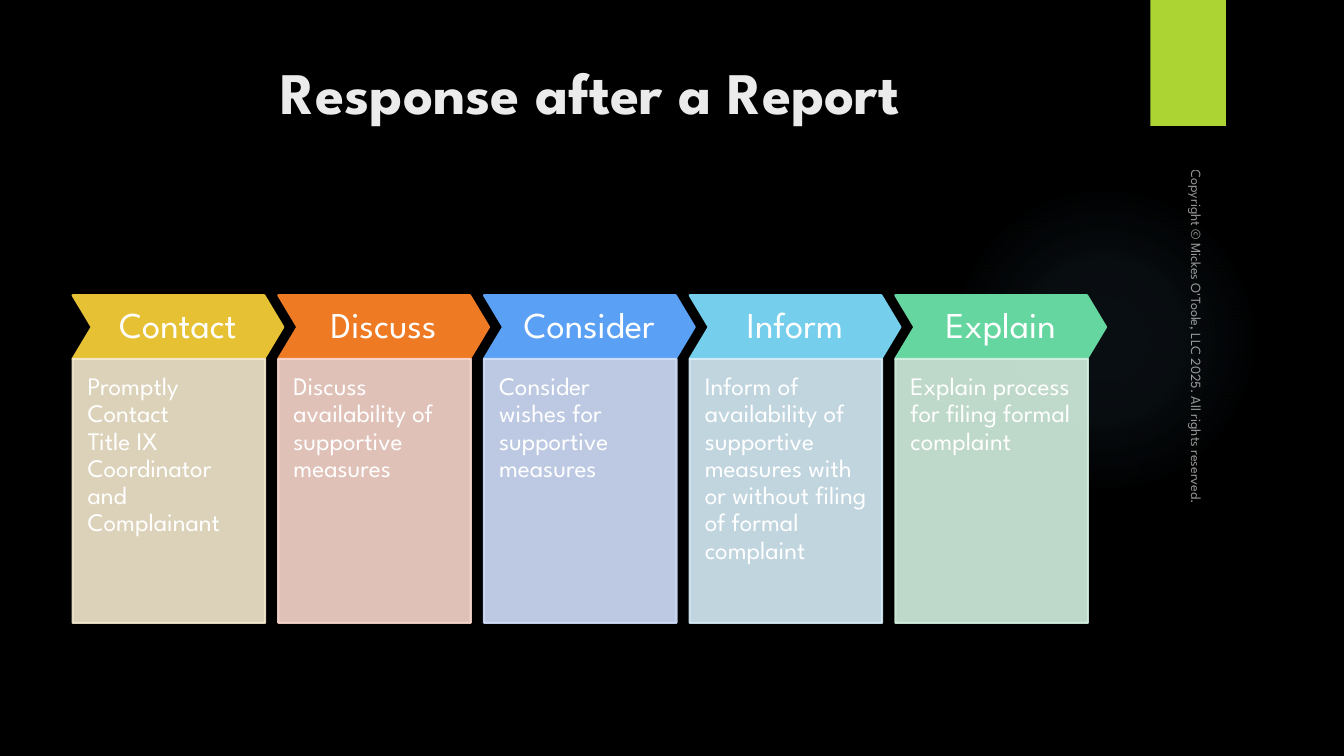
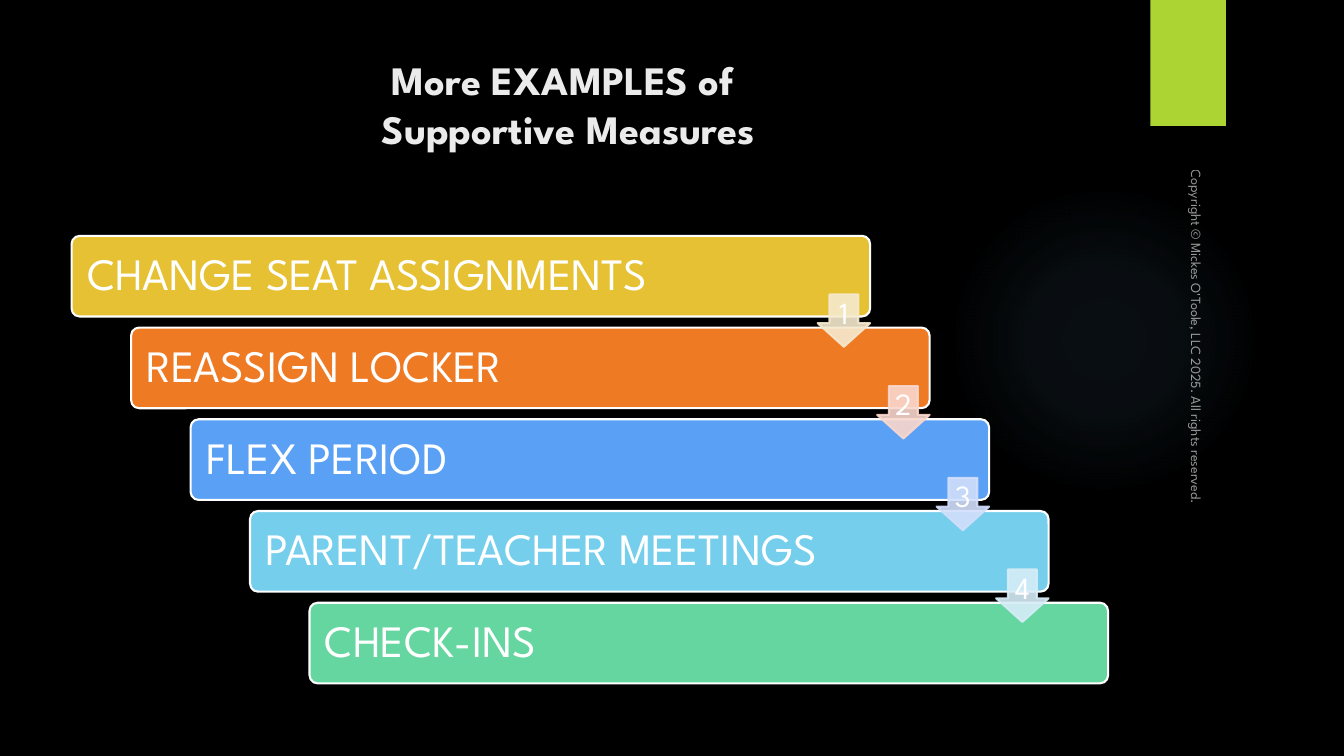
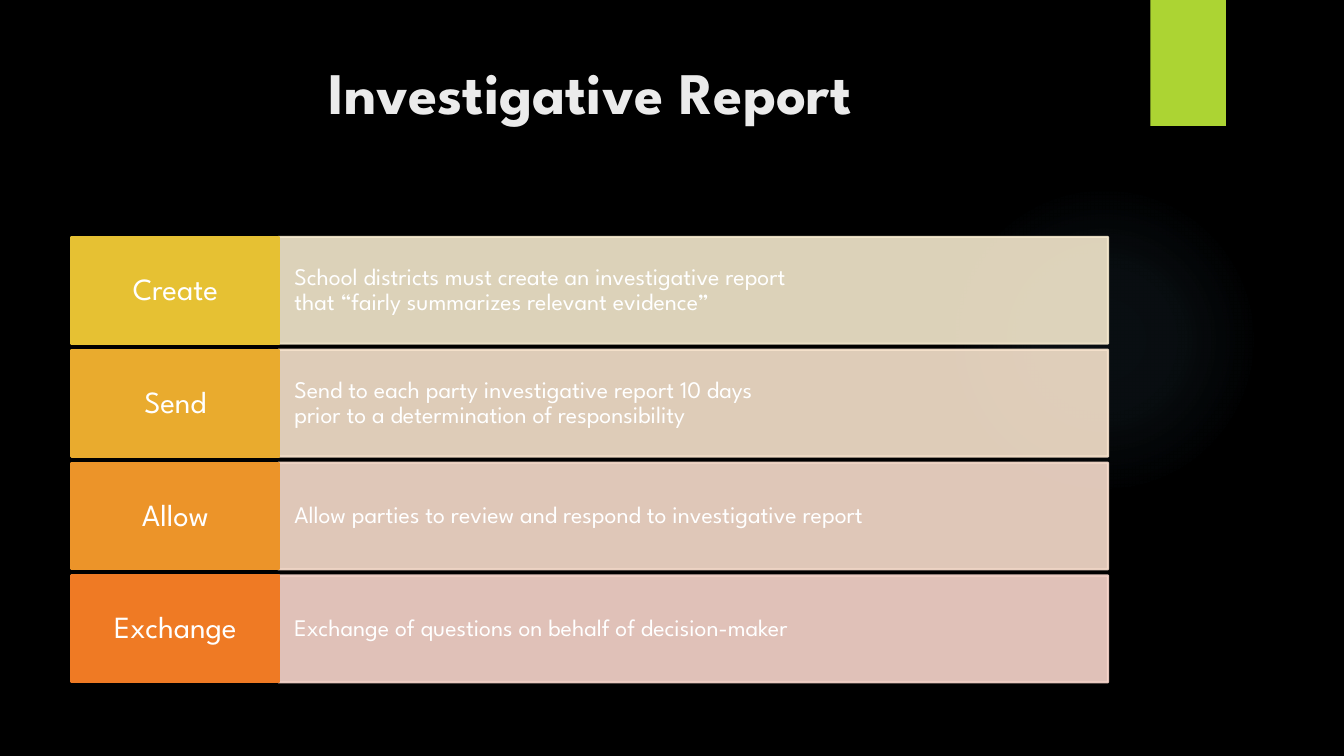
from lxml import etree
from pptx import Presentation
from pptx.dml.color import RGBColor
from pptx.enum.shapes import MSO_SHAPE
from pptx.enum.text import MSO_ANCHOR, MSO_AUTO_SIZE, PP_ALIGN
from pptx.oxml import parse_xml
from pptx.oxml.ns import nsdecls, qn
from pptx.util import Inches, Pt

RECT, ROUNDED, OVAL = MSO_SHAPE.RECTANGLE, MSO_SHAPE.ROUNDED_RECTANGLE, MSO_SHAPE.OVAL
CHEVRON, DOWN_ARROW = MSO_SHAPE.CHEVRON, MSO_SHAPE.DOWN_ARROW
TOP, MIDDLE, BOTTOM = MSO_ANCHOR.TOP, MSO_ANCHOR.MIDDLE, MSO_ANCHOR.BOTTOM
LEFT, CENTER = PP_ALIGN.LEFT, PP_ALIGN.CENTER
NO_AUTOFIT = MSO_AUTO_SIZE.NONE

FONT = "League Spartan"
COLORS = {
    "background": "000000", "title": "EBEBEB", "text": "FFFFFF",
    "band": "ACD433", "glow": "7AC4F0",
    "gold": "E6C133", "amber": "E9AB2E", "tangerine": "EC9429",
    "orange": "EF7A24", "blue": "5AA0F5", "sky": "75CEEC", "green": "65D6A0",
    "pale gold": "F5E9CE", "pale amber": "F7E3CD", "pale tangerine": "F8DDCD",
    "pale orange": "F9D7CD", "pale blue": "D2DFFB", "pale sky": "D6EDF8",
    "pale green": "D3F0DF",
}
GLOW_STOPS = [(0, 7), (36, 6), (69, 0)]  # position and opacity, percent
COPYRIGHT = "Copyright © Mickes O'Toole, LLC 2025. All rights reserved."


def rgb(name):
    return RGBColor.from_string(COLORS[name])


def set_opacity(element, percent):
    for color in element.iter(qn("a:srgbClr")):
        etree.SubElement(color, qn("a:alpha")).set("val", str(percent * 1000))


class Deck:
    def __init__(self):
        self.prs = Presentation()
        self.prs.slide_width, self.prs.slide_height = Inches(13.33), Inches(7.5)
        backdrop = self.prs.slide_master.background.fill
        backdrop.solid()
        backdrop.fore_color.rgb = rgb("background")
        self.slide = None

    def new_slide(self, title, size=42, left=0.71, copyright_line=True):
        self.slide = self.prs.slides.add_slide(self.prs.slide_layouts[5])
        self.glow()
        self.shape(RECT, 11.41, 0, 0.75, 1.25, "band")
        self.title(title, size, left)
        if copyright_line:
            self.copyright()

    def title(self, text, size, left):
        heading = self.slide.shapes.title
        heading.left, heading.top = Inches(left), Inches(0.5)
        heading.width, heading.height = Inches(11 - left), Inches(1.53)
        self.add_text(heading, text, size, CENTER, TOP, color="title", bold=True, spacing=1)

    def glow(self):
        glow = self.shape(OVAL, 9.41, 1.83, 3.08, 3.08)
        stops = "".join(
            f'<a:gs pos="{pos * 1000}"><a:srgbClr val="{COLORS["glow"]}">'
            f'<a:alpha val="{alpha * 1000}"/></a:srgbClr></a:gs>'
            for pos, alpha in GLOW_STOPS)
        gradient = parse_xml(
            f'<a:gradFill {nsdecls("a")}><a:gsLst>{stops}</a:gsLst><a:path path="circle">'
            '<a:fillToRect l="50000" t="50000" r="50000" b="50000"/></a:path></a:gradFill>')
        properties = glow.element.spPr
        properties.replace(properties.find(qn("a:noFill")), gradient)

    def copyright(self):
        notice = self.slide.shapes.add_textbox(
            Inches(9.79), Inches(3.53), Inches(4.22), Inches(0.33))
        notice.rotation = 90
        self.add_text(notice, COPYRIGHT, 10, LEFT, BOTTOM, spacing=1)
        set_opacity(notice.element.txBody, 60)

    def shape(self, kind, x, y, w, h, fill=None, line=None, adjust=(), opacity=100):
        shape = self.slide.shapes.add_shape(kind, Inches(x), Inches(y), Inches(w), Inches(h))
        shape.shadow.inherit = False
        for i, value in enumerate(adjust):
            shape.adjustments[i] = value
        if fill:
            shape.fill.solid()
            shape.fill.fore_color.rgb = rgb(fill)
        else:
            shape.fill.background()
        if line:
            shape.line.color.rgb = rgb(line)
            shape.line.width = Pt(1.5)
        else:
            shape.line.fill.background()
        if opacity < 100:
            set_opacity(shape.element.spPr, opacity)
        return shape

    def pale_shape(self, kind, x, y, w, h, color, adjust=()):
        return self.shape(kind, x, y, w, h, color, color, adjust, opacity=90)

    def add_text(self, shape, text, size, align=LEFT, anchor=MIDDLE, inset=(0.1, 0.05),
                 color="text", bold=False, spacing=0.9):
        frame = shape.text_frame
        frame.word_wrap, frame.auto_size = True, NO_AUTOFIT
        frame.vertical_anchor = anchor
        frame.margin_left = frame.margin_right = Inches(inset[0])
        frame.margin_top = frame.margin_bottom = Inches(inset[1])
        paragraph = frame.paragraphs[0]
        paragraph.alignment, paragraph.line_spacing = align, spacing
        for i, line in enumerate(text.split("\n")):
            if i:
                paragraph.add_line_break()
            run = paragraph.add_run()
            run.text = line
            run.font.name, run.font.size, run.font.bold = FONT, Pt(size), bold
            run.font.color.rgb = rgb(color)


def response_slide(deck):
    deck.new_slide("Response after a Report")
    steps = [
        ("Contact", "gold", "Promptly Contact \nTitle IX Coordinator and Complainant"),
        ("Discuss", "orange", "Discuss availability of supportive measures"),
        ("Consider", "blue", "Consider wishes for supportive measures"),
        ("Inform", "sky", "Inform of availability of supportive measures "
                          "with or without filing of formal complaint"),
        ("Explain", "green", "Explain process for filing formal complaint"),
    ]
    for i, (name, color, detail) in enumerate(steps):
        x = 0.72 + 2.04 * i
        header = deck.shape(CHEVRON, x, 2.93, 2.09, 0.63, color, color, [0.3])
        deck.add_text(header, name, 26, CENTER, inset=(0.08, 0.08))
        card = deck.pale_shape(RECT, x, 3.56, 1.91, 2.62, f"pale {color}")
        deck.add_text(card, detail, 18, anchor=TOP, inset=(0.15, 0.15))


def measures_slide(deck):
    deck.new_slide("More EXAMPLES of \nSupportive Measures", size=28.8, left=0.27)
    measures = [
        ("CHANGE SEAT ASSIGNMENTS", "gold"),
        ("REASSIGN LOCKER", "orange"),
        ("FLEX PERIOD", "blue"),
        ("PARENT/TEACHER MEETINGS", "sky"),
        ("CHECK-INS", "green"),
    ]
    step_x, step_y = 0.59, 0.91
    for i, (measure, color) in enumerate(measures):
        bar = deck.shape(ROUNDED, 0.71 + step_x * i, 2.34 + step_y * i, 7.92, 0.8,
                         color, "text", [0.1])
        deck.add_text(bar, measure, 32, inset=(0.13, 0.13))
    # Numbered arrows sit over the joints between bars
    for i, (_, color) in enumerate(measures[:-1]):
        arrow = deck.pale_shape(DOWN_ARROW, 8.11 + step_x * i, 2.92 + step_y * i,
                                0.52, 0.52, f"pale {color}", [0.55, 0.45])
        deck.add_text(arrow, str(i + 1), 22, CENTER, inset=(0.03, 0.03))


def report_slide(deck):
    deck.new_slide("Investigative Report", copyright_line=False)
    duties = [
        ("Create", "gold", "School districts must create an investigative report \n"
                           "that “fairly summarizes relevant evidence”"),
        ("Send", "amber", "Send to each party investigative report 10 days \n"
                          "prior to a determination of responsibility"),
        ("Allow", "tangerine", "Allow parties to review and respond to investigative report"),
        ("Exchange", "orange", "Exchange of questions on behalf of decision-maker"),
    ]
    for i, (name, color, detail) in enumerate(duties):
        y = 2.35 + 1.12 * i
        panel = deck.pale_shape(RECT, 2.76, y, 8.23, 1.06, f"pale {color}")
        deck.add_text(panel, detail, 17, inset=(0.16, 0.27))
        label = deck.shape(RECT, 0.71, y, 2.06, 1.06, color, color)
        deck.add_text(label, name, 22, CENTER, inset=(0.11, 0.1))


def main():
    deck = Deck()
    response_slide(deck)
    measures_slide(deck)
    report_slide(deck)
    deck.prs.save("out.pptx")


if __name__ == "__main__":
    main()
